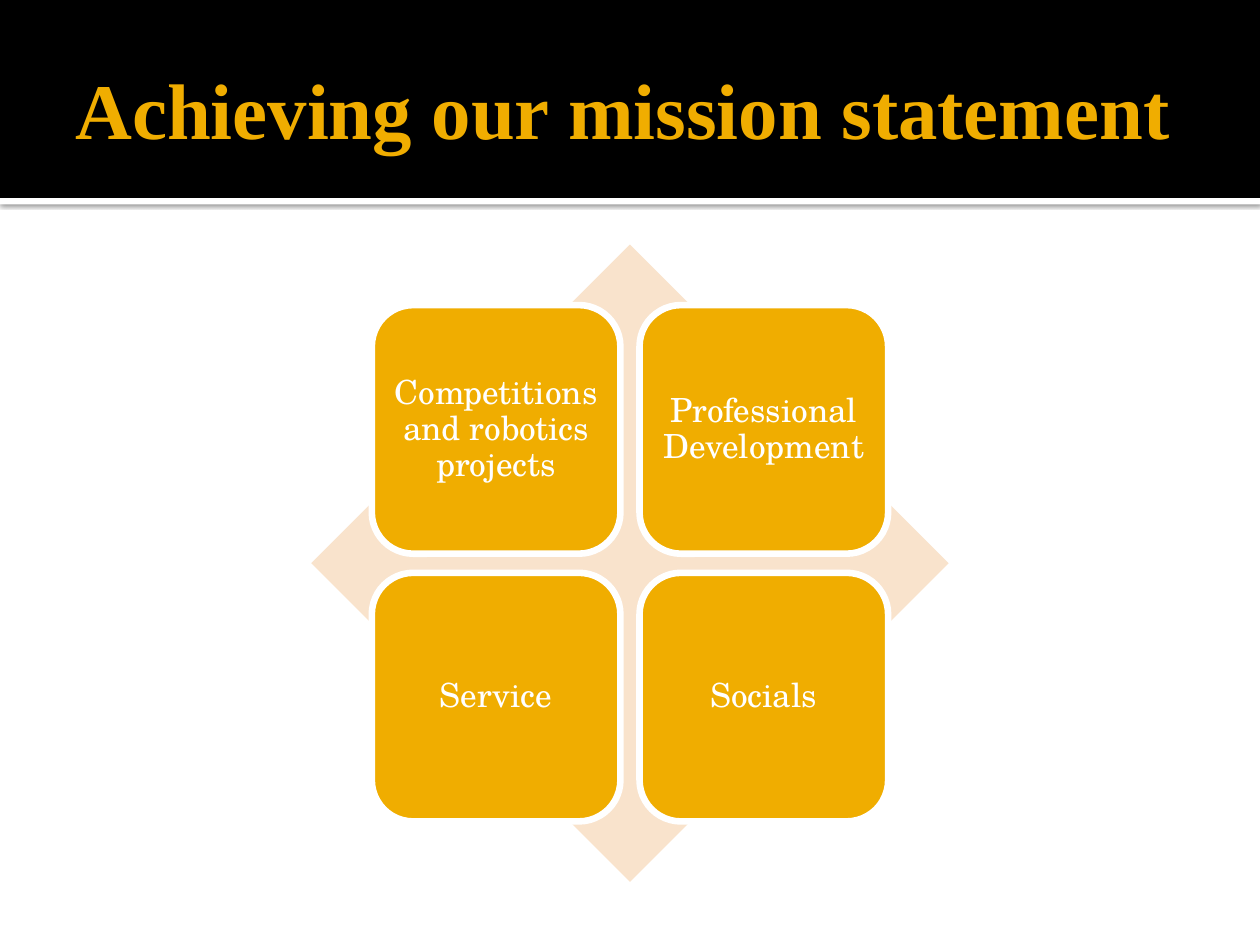
from lxml import etree
from pptx import Presentation
from pptx.dml.color import RGBColor
from pptx.enum.shapes import MSO_SHAPE
from pptx.enum.text import MSO_ANCHOR, MSO_AUTO_SIZE, PP_ALIGN
from pptx.oxml.ns import qn
from pptx.util import Cm, Pt

RECT, ROUND, DIAMOND = MSO_SHAPE.RECTANGLE, MSO_SHAPE.ROUNDED_RECTANGLE, MSO_SHAPE.DIAMOND
MIDDLE, LEFT, CENTER = MSO_ANCHOR.MIDDLE, PP_ALIGN.LEFT, PP_ALIGN.CENTER
NO_FIT = MSO_AUTO_SIZE.NONE
WIDE, HIGH = 25.4, 19.05
GOLD, PEACH, WHITE, BLACK = "F0AD00", "F9E3CC", "FFFFFF", "000000"
TILES = ["Competitions and robotics projects", "Professional Development",
         "Service", "Socials"]


def paint(fmt, color):
    """Give a fill or a font colour a solid hex colour."""
    fmt.rgb = RGBColor.from_string(color)


def add_form(slide, kind, box, color):
    """Add a flat shape in a box of left, top, width and height in cm."""
    form = slide.shapes.add_shape(kind, *map(Cm, box))
    form.shadow.inherit = False
    form.fill.solid()
    paint(form.fill.fore_color, color)
    form.line.fill.background()
    return form


def set_text(form, text, size, font, color, align, pads):
    """Write one paragraph, centred vertically, with pads in cm."""
    frame = form.text_frame
    frame.text = text
    frame.word_wrap, frame.auto_size = True, NO_FIT
    frame.vertical_anchor = MIDDLE
    (frame.margin_left, frame.margin_top,
     frame.margin_right, frame.margin_bottom) = map(Cm, pads)
    para = frame.paragraphs[0]
    para.alignment = align
    run = para.runs[0]
    run.font.size, run.font.name = Pt(size), font
    paint(run.font.color, color)
    return para


def add_shade(form):
    """Give a shape a soft shadow that falls straight down."""
    effects = form.element.spPr.find(qn("a:effectLst"))
    shade = etree.SubElement(effects, qn("a:outerShdw"), blurRad=str(Pt(2.5)),
                             dist=str(Pt(0.8)), dir="5400000", algn="tl", rotWithShape="0")
    tint = etree.SubElement(shade, qn("a:srgbClr"), val=BLACK)
    etree.SubElement(tint, qn("a:alpha"), val="60000")


def add_header(slide, left, top, width, height):
    """Draw the black band, its white edge and the title on it."""
    edge = add_form(slide, RECT, (left, top + height, width, 0.13), WHITE)
    add_shade(edge)
    band = add_form(slide, RECT, (left, top, width, height), BLACK)
    title = slide.shapes.title
    title.left, title.top = Cm(left + 1.27), Cm(top + 0.43)
    title.width, title.height = Cm(width - 2.54), Cm(height - 0.51)
    para = set_text(title, "Achieving our mission statement", 45, "Times New Roman",
                    GOLD, LEFT, (0.25, 0.13, 0.13, 0.13))
    para.runs[0].font.bold = True
    band.element.addnext(title.element)


def add_matrix(slide, left, top, side):
    """Draw a diamond with a two by two grid of tiles over it."""
    add_form(slide, DIAMOND, (left, top, side, side), PEACH)
    tile, inset = side * 0.39, side * 0.095
    step = side - 2 * inset - tile
    for index, text in enumerate(TILES):
        row, col = divmod(index, 2)
        box = (left + inset + col * step, top + inset + row * step, tile, tile)
        form = add_form(slide, ROUND, box, GOLD)
        form.line.width = Pt(3.78)
        paint(form.line.color, WHITE)
        para = set_text(form, text, 19, "TeX Gyre Schola", WHITE, CENTER, [0.2] * 4)
        para.line_spacing = 0.9


def main():
    """Build and save the slide."""
    deck = Presentation()
    deck.slide_width, deck.slide_height = Cm(WIDE), Cm(HIGH)
    slide = deck.slides.add_slide(deck.slide_layouts[5])
    add_header(slide, 0, 0, WIDE, 3.99)
    side = 12.85
    add_matrix(slide, (WIDE - side) / 2, 4.93, side)
    deck.save("out.pptx")


if __name__ == "__main__":
    main()
